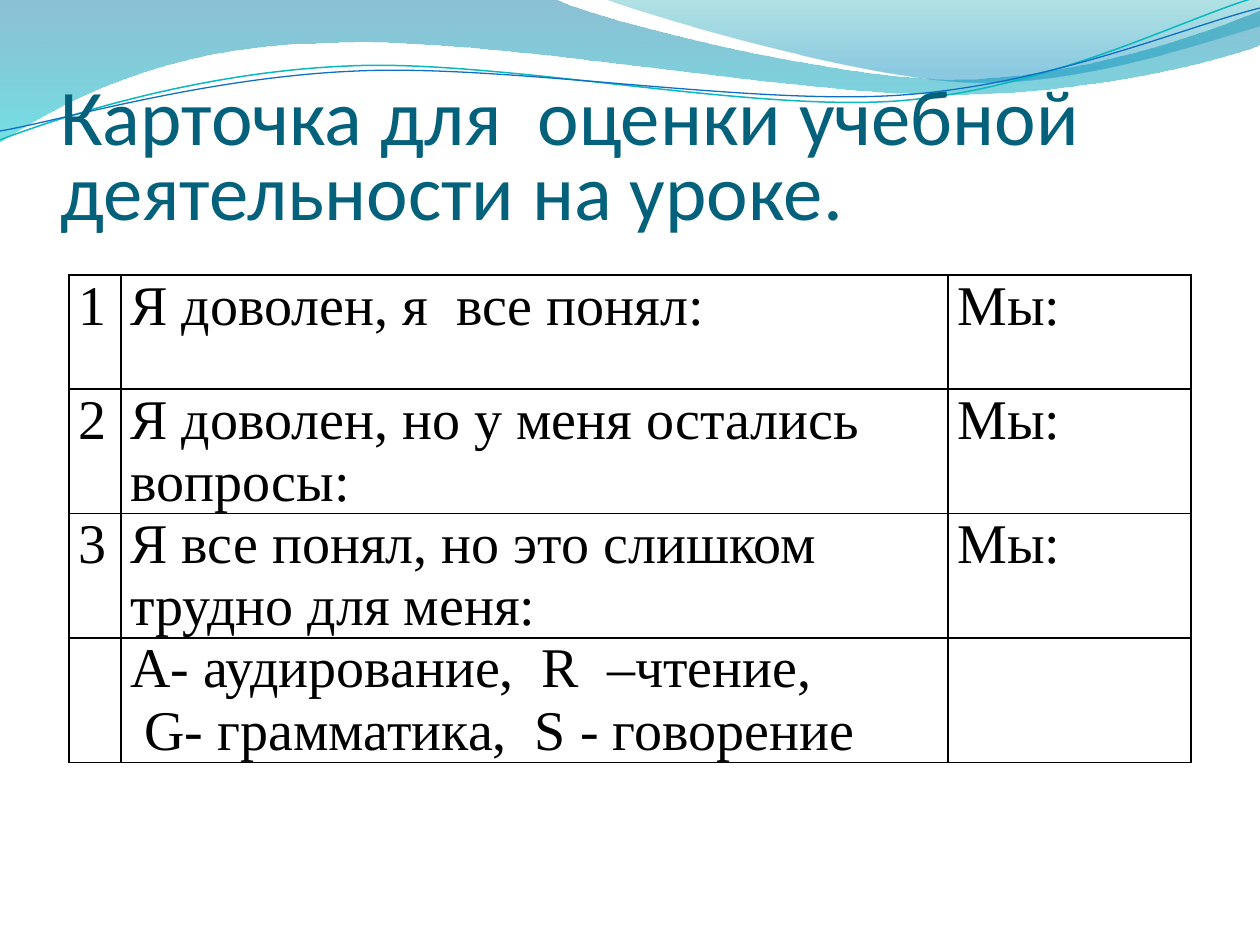
import math

import pptx
import pptx.util
import pptx.dml.color
import pptx.enum.text
import pptx.oxml
import pptx.oxml.ns
from lxml import etree

RGBColor = pptx.dml.color.RGBColor
BLACK = RGBColor(0x00, 0x00, 0x00)
TITLE_COLOR = RGBColor(0x04, 0x61, 0x7B)
TEAL_LINE = RGBColor(0x0A, 0xB8, 0xBF)
BLUE_LINE = RGBColor(0x0F, 0x6F, 0xC6)
DEEP_BLUE = RGBColor(0x00, 0x74, 0xA1)
AQUA = RGBColor(0x00, 0xC6, 0xCF)
SEA_GREEN = RGBColor(0x00, 0xA1, 0xA9)
SKY_BLUE = RGBColor(0x00, 0x8B, 0xBF)

PX = 914400 // 126
STRAND_TILT = 2.7

TITLE = "Карточка для  оценки учебной деятельности на уроке."
ROWS = [
    ("1", "Я доволен, я  все понял:", "Мы:"),
    ("2", "Я доволен, но у меня остались вопросы:", "Мы:"),
    ("3", "Я все понял, но это слишком трудно для меня:", "Мы:"),
    ("", "А- аудирование,  R  –чтение,\n G- грамматика,  S - говорение", ""),
]
COLUMN_WIDTHS = [52, 827, 243]
ROW_HEIGHT = 114

# Each segment has one point for a straight line, three for a cubic curve.
WAVES = [
    ((0, 0), [
        [(554, -1)],
        [(600, 21), (837, 79), (955, 79)],
        [(1075, 79), (1207, 33), (1260, 11)],
        [(1261, 45)],
        [(1237, 55), (1096, 96), (940, 94)],
        [(784, 94), (481, 35), (324, 43)],
        [(163, 45), (58, 105), (-1, 142)],
        [(0, 0)],
    ], [(0, DEEP_BLUE, 45), (1, AQUA, 55)]),
    ((604, -1), [
        [(641, 14), (859, 78), (969, 82)],
        [(1079, 86), (1211, 40), (1260, 26)],
        [(1260, 0)],
        [(604, -1)],
    ], [(0, SEA_GREEN, 30), (0.8, SKY_BLUE, 45)]),
]
STRANDS = [
    ((0, 140), [
        [(60, 117), (199, 72), (349, 66)],
        [(498, 59), (747, 112), (898, 101)],
        [(1050, 89), (1182, 19), (1257, -3)],
    ], (629, 72), TEAL_LINE, 0.85),
    ((0, 131), [
        [(59, 121), (207, 77), (357, 71)],
        [(508, 64), (752, 106), (903, 95)],
        [(1053, 84), (1187, 26), (1260, 8)],
    ], (629, 74), BLUE_LINE, 0.75),
]


def px(value):
    return pptx.util.Emu(value * PX)


def turn(point, center, degrees):
    angle = math.radians(degrees)
    x, y = point[0] - center[0], point[1] - center[1]
    return (center[0] + x * math.cos(angle) - y * math.sin(angle),
            center[1] + x * math.sin(angle) + y * math.cos(angle))


def add_curve(slide, start, segments, close):
    points = [(x * PX, y * PX) for x, y in [start, *sum(segments, [])]]
    builder = slide.shapes.build_freeform(*points[0], scale=1)
    builder.add_line_segments(points[1:], close=close)
    shape = builder.convert_to_shape()
    shape.shadow.inherit = False
    lines = iter(list(shape.element.spPr.iter(pptx.oxml.ns.qn("a:lnTo"))))
    for segment in segments:
        parts = [next(lines) for _ in segment]
        if len(parts) == 3:
            curve = pptx.oxml.parse_xml(
                "<a:cubicBezTo %s/>" % pptx.oxml.ns.nsdecls("a"))
            parts[0].addprevious(curve)
            for part in parts:
                curve.append(part[0])
                part.getparent().remove(part)
    return shape


def add_wave(slide, start, segments, stops):
    shape = add_curve(slide, start, segments, True)
    shape.line.fill.background()
    shape.fill.gradient()
    shape.fill.gradient_angle = 270
    for stop, (position, color, _) in zip(shape.fill.gradient_stops, stops):
        stop.position = position
        stop.color.rgb = color
    colors = shape.element.spPr.iter(pptx.oxml.ns.qn("a:srgbClr"))
    for element, (_, _, opacity) in zip(list(colors), stops):
        etree.SubElement(element, pptx.oxml.ns.qn("a:alpha"), val=str(opacity * 1000))


def add_strand(slide, start, segments, center, color, width):
    level = [[turn(point, center, STRAND_TILT) for point in segment]
             for segment in segments]
    shape = add_curve(slide, turn(start, center, STRAND_TILT), level, False)
    shape.rotation = -STRAND_TILT
    shape.fill.background()
    shape.line.color.rgb = color
    shape.line.width = pptx.util.Pt(width)


def format_title(title):
    title.left, title.top, title.width, title.height = map(px, (60, 78, 1134, 158))
    frame = title.text_frame
    frame.text = TITLE
    frame.word_wrap = True
    frame.auto_size = pptx.enum.text.MSO_AUTO_SIZE.NONE
    frame.vertical_anchor = pptx.enum.text.MSO_ANCHOR.BOTTOM
    frame.margin_left = frame.margin_right = frame.margin_bottom = 0
    frame.margin_top = px(6)
    paragraph = frame.paragraphs[0]
    paragraph.alignment = pptx.enum.text.PP_ALIGN.LEFT
    paragraph.line_spacing = 0.8
    paragraph.font.size = pptx.util.Pt(45)
    paragraph.font.name = "Calibri"
    paragraph.font.color.rgb = TITLE_COLOR
    title.element.getparent().append(title.element)


def format_cell(cell, text):
    cell.margin_left = cell.margin_right = pptx.util.Pt(5.4)
    cell.margin_top = cell.margin_bottom = 0
    if text:
        cell.text = text
        for paragraph in cell.text_frame.paragraphs:
            paragraph.font.size = pptx.util.Pt(32)
            paragraph.font.name = "Times New Roman"
            paragraph.font.color.rgb = BLACK
    properties = cell._tc.get_or_add_tcPr()
    for side in ("lnL", "lnR", "lnT", "lnB"):
        border = etree.SubElement(properties, pptx.oxml.ns.qn("a:" + side), w="12700")
        fill = etree.SubElement(border, pptx.oxml.ns.qn("a:solidFill"))
        etree.SubElement(fill, pptx.oxml.ns.qn("a:srgbClr"), val=str(BLACK))
    cell.fill.background()


def add_card(slide):
    frame = slide.shapes.add_table(
        len(ROWS), len(COLUMN_WIDTHS), px(69), px(275),
        px(sum(COLUMN_WIDTHS)), px(ROW_HEIGHT * len(ROWS)))
    table = frame.table
    table.first_row = table.horz_banding = False
    for column, width in zip(table.columns, COLUMN_WIDTHS):
        column.width = px(width)
    for row, texts in zip(table.rows, ROWS):
        row.height = px(ROW_HEIGHT)
        for cell, text in zip(row.cells, texts):
            format_cell(cell, text)


def main():
    presentation = pptx.Presentation()
    presentation.slide_width = pptx.util.Inches(10)
    presentation.slide_height = pptx.util.Inches(7.5)
    slide = presentation.slides.add_slide(presentation.slide_layouts[5])
    for wave in WAVES:
        add_wave(slide, *wave)
    for strand in STRANDS:
        add_strand(slide, *strand)
    add_card(slide)
    format_title(slide.shapes.title)
    presentation.save("out.pptx")


if __name__ == "__main__":
    main()
